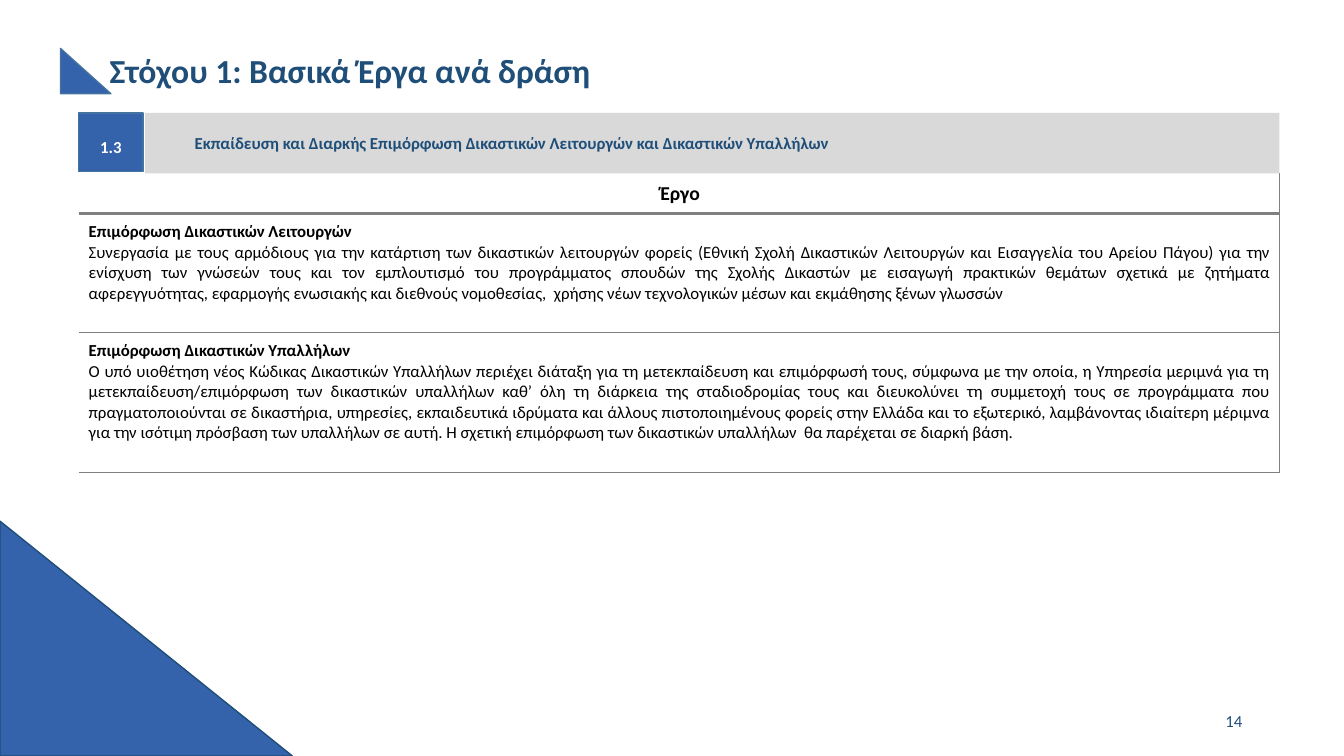
from lxml import etree
from pptx import Presentation
from pptx.dml.color import RGBColor
from pptx.enum.shapes import MSO_SHAPE
from pptx.enum.text import MSO_ANCHOR, PP_ALIGN
from pptx.oxml.ns import qn
from pptx.util import Inches, Pt

RECTANGLE, TRIANGLE = MSO_SHAPE.RECTANGLE, MSO_SHAPE.RIGHT_TRIANGLE
TOP, MIDDLE = MSO_ANCHOR.TOP, MSO_ANCHOR.MIDDLE
LEFT, CENTER, RIGHT, JUSTIFY = (
    PP_ALIGN.LEFT, PP_ALIGN.CENTER, PP_ALIGN.RIGHT, PP_ALIGN.JUSTIFY)

WIDTH, HEIGHT = 13.33, 7.5
FONT = "Calibri"
COLORS = {"navy": "1F4E79", "blue": "3462AB", "edge": "43739E", "band": "D9D9D9",
          "rule": "808080", "white": "FFFFFF", "black": "000000"}
THIN, THICK = 1, 2.25
ROW_HEIGHTS = (0.4, 1.18, 1.39)
BADGE_WIDTH = 0.64

PROJECTS = [
    ("Επιμόρφωση Δικαστικών Λειτουργών",
     "Συνεργασία με τους αρμόδιους για την κατάρτιση των δικαστικών λειτουργών φορείς "
     "(Εθνική Σχολή Δικαστικών Λειτουργών και Εισαγγελία του Αρείου Πάγου) για την ενίσχυση "
     "των γνώσεών τους και τον εμπλουτισμό του προγράμματος σπουδών της Σχολής Δικαστών με "
     "εισαγωγή πρακτικών θεμάτων σχετικά με ζητήματα αφερεγγυότητας, εφαρμογής ενωσιακής και "
     "διεθνούς νομοθεσίας,  χρήσης νέων τεχνολογικών μέσων και εκμάθησης ξένων γλωσσών"),
    ("Επιμόρφωση Δικαστικών Υπαλλήλων",
     "Ο υπό υιοθέτηση νέος Κώδικας Δικαστικών Υπαλλήλων περιέχει διάταξη για τη μετεκπαίδευση "
     "και επιμόρφωσή τους, σύμφωνα με την οποία, η Υπηρεσία μεριμνά για τη "
     "μετεκπαίδευση/επιμόρφωση των δικαστικών υπαλλήλων καθ’ όλη τη διάρκεια της "
     "σταδιοδρομίας τους και διευκολύνει τη συμμετοχή τους σε προγράμματα που "
     "πραγματοποιούνται σε δικαστήρια, υπηρεσίες, εκπαιδευτικά ιδρύματα και άλλους "
     "πιστοποιημένους φορείς στην Ελλάδα και το εξωτερικό, λαμβάνοντας ιδιαίτερη μέριμνα για "
     "την ισότιμη πρόσβαση των υπαλλήλων σε αυτή. Η σχετική επιμόρφωση των δικαστικών "
     "υπαλλήλων  θα παρέχεται σε διαρκή βάση."),
]


def color(name):
    return RGBColor.from_string(COLORS[name])


def write(para, text, size, ink, bold=False, align=LEFT):
    para.alignment = align
    span = para.add_run()
    span.text = text
    font = span.font
    font.name, font.size, font.bold = FONT, Pt(size), bold
    font.color.rgb = color(ink)


def add_block(page, kind, box, fill, edge=None):
    block = page.shapes.add_shape(kind, *map(Inches, box))
    block.shadow.inherit = False
    block.fill.solid()
    block.fill.fore_color.rgb = color(fill)
    if edge:
        block.line.color.rgb = color(edge)
        block.line.width = Pt(1)
    else:
        block.line.fill.background()
    block.text_frame.word_wrap = True
    block.text_frame.vertical_anchor = MIDDLE
    return block


def add_label(page, box, text, size, bold=False, align=LEFT):
    frame = page.shapes.add_textbox(*map(Inches, box)).text_frame
    frame.word_wrap = True
    frame.vertical_anchor = MIDDLE
    write(frame.paragraphs[0], text, size, "navy", bold, align)


def add_title(page, box, text):
    left, top, width, height = box
    add_block(page, TRIANGLE, (left, top + 0.08, 0.5, 0.45), "blue", "edge")
    add_label(page, (left + 0.39, top, width - 0.39, height), text, 24, True)


def add_action_bar(page, box, number, text):
    left, top, width, height = box
    offset = BADGE_WIDTH + 0.02
    band = add_block(page, RECTANGLE, (left + offset, top, width - offset, height), "band")
    band.text_frame.margin_left = Inches(0.49)
    write(band.text_frame.paragraphs[0], text, 12, "navy", True)
    badge = add_block(page, RECTANGLE, (left, top, BADGE_WIDTH, height - 0.02), "blue", "edge")
    frame = badge.text_frame
    frame.margin_left = frame.margin_top = frame.margin_right = frame.margin_bottom = 0
    frame.paragraphs[0].line_spacing = 1.5
    write(frame.paragraphs[0], number, 12, "white", True, CENTER)


def set_borders(cell, **widths):
    """Rule the named sides (L, R, T, B, in that order) and clear the others."""
    properties = cell._tc.get_or_add_tcPr()
    for index, side in enumerate("LRTB"):
        width = widths.get(side, 0)
        line = etree.Element(qn(f"a:ln{side}"), w=str(Pt(width)))
        if width:
            fill = etree.SubElement(line, qn("a:solidFill"))
            etree.SubElement(fill, qn("a:srgbClr"), val=COLORS["rule"])
        else:
            etree.SubElement(line, qn("a:noFill"))
        properties.insert(index, line)


def add_project_table(page, box, heading, projects):
    table = page.shapes.add_table(len(projects) + 1, 1, *map(Inches, box)).table
    table.first_row = table.horz_banding = False
    for index, height in enumerate(ROW_HEIGHTS):
        table.rows[index].height = Inches(height)
        cell = table.cell(index, 0)
        cell.margin_left = Inches(0.1)
        cell.margin_right = cell.margin_top = cell.margin_bottom = Inches(0.08)
        cell.fill.solid()
        cell.fill.fore_color.rgb = color("white")
        frame = cell.text_frame
        if index == 0:
            cell.vertical_anchor = MIDDLE
            set_borders(cell, R=THIN, B=THICK)
            write(frame.paragraphs[0], heading, 14, "black", True, CENTER)
            continue
        cell.vertical_anchor = TOP
        set_borders(cell, R=THIN, T=THICK if index == 1 else THIN, B=THIN)
        name, details = projects[index - 1]
        write(frame.paragraphs[0], name, 12, "black", True, JUSTIFY)
        write(frame.add_paragraph(), details, 12, "black", False, JUSTIFY)


def main():
    deck = Presentation()
    deck.slide_width, deck.slide_height = Inches(WIDTH), Inches(HEIGHT)
    page = deck.slides.add_slide(deck.slide_layouts[6])
    left, bar_top, width, bar_height = 0.78, 1.12, 11.91, 0.6
    add_block(page, TRIANGLE, (0, HEIGHT - 2.33, 2.9, 2.33), "blue", "navy")
    add_title(page, (0.6, 0.4, 11.89, 0.58), "Στόχου 1: Βασικά Έργα ανά δράση")
    add_label(page, (9.42, 6.95, 3, 0.4), "14", 12, align=RIGHT)
    add_project_table(page, (left, bar_top + bar_height, width, sum(ROW_HEIGHTS)),
                      "Έργο", PROJECTS)
    add_action_bar(page, (left, bar_top, width, bar_height), "1.3",
                   "Εκπαίδευση και Διαρκής Επιμόρφωση Δικαστικών Λειτουργών "
                   "και Δικαστικών Υπαλλήλων")
    deck.save("out.pptx")


if __name__ == "__main__":
    main()
